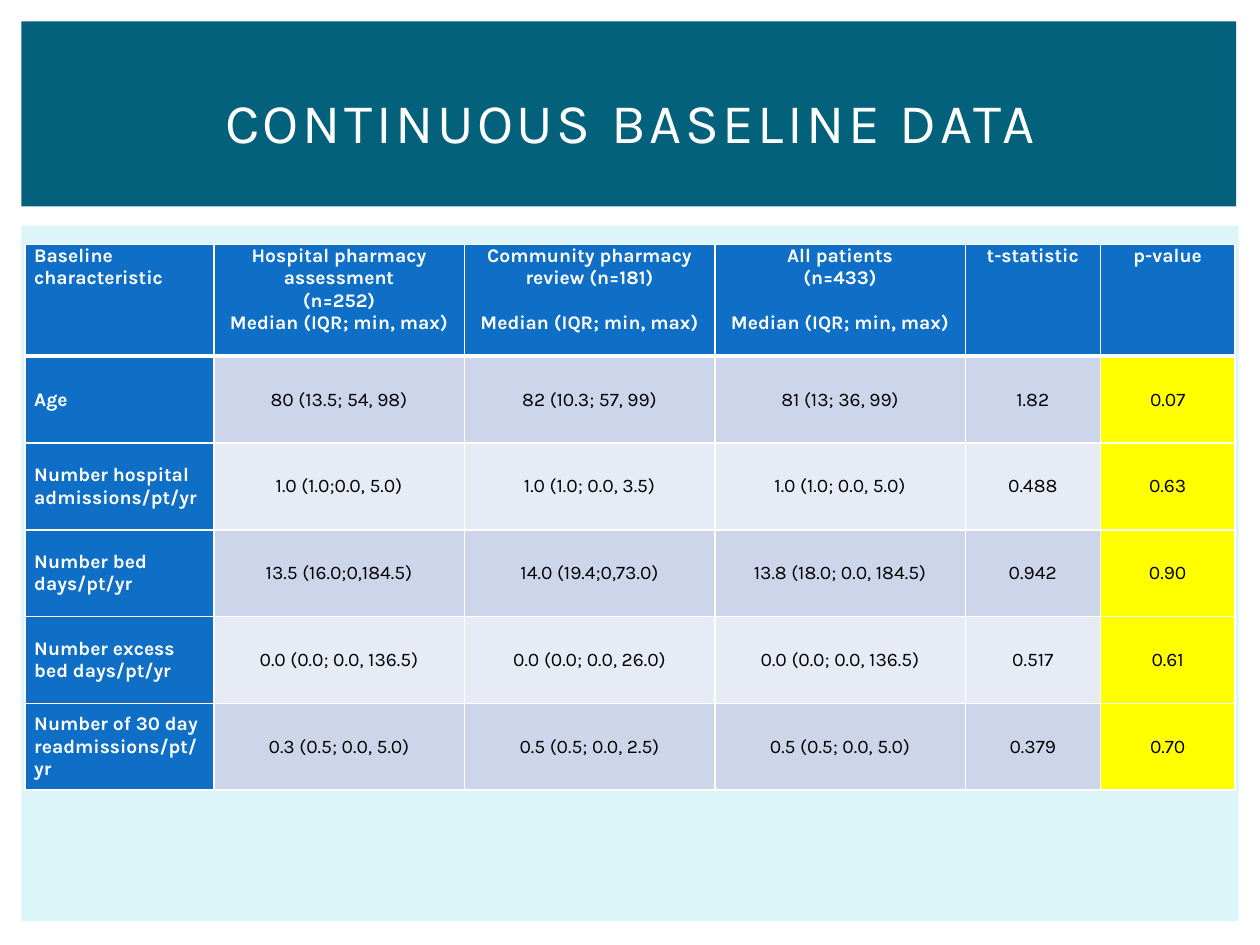
import pptx
import pptx.dml.color
import pptx.enum.shapes
import pptx.enum.text
import pptx.oxml
import pptx.oxml.ns
import pptx.util

Cm = pptx.util.Cm
Pt = pptx.util.Pt
RGBColor = pptx.dml.color.RGBColor
ALIGN = pptx.enum.text.PP_ALIGN
ANCHOR = pptx.enum.text.MSO_ANCHOR

WHITE = RGBColor(0xFF, 0xFF, 0xFF)
BLACK = RGBColor(0x00, 0x00, 0x00)
TEAL = RGBColor(0x04, 0x61, 0x7B)
PALE_AQUA = RGBColor(0xDB, 0xF5, 0xF9)
BLUE = RGBColor(0x0F, 0x6F, 0xC6)
BAND_DARK = RGBColor(0xCC, 0xD5, 0xEA)
BAND_LIGHT = RGBColor(0xE7, 0xEB, 0xF5)
YELLOW = RGBColor(0xFF, 0xFF, 0x00)

HEADINGS = [
    "Baseline characteristic",
    "Hospital pharmacy assessment\n(n=252)\nMedian (IQR; min, max)",
    "Community pharmacy review (n=181)\n\nMedian (IQR; min, max)",
    "All patients\n(n=433)\n\nMedian (IQR; min, max)",
    "t-statistic",
    "p-value",
]
CHARACTERISTICS = [
    ["Age", "80 (13.5; 54, 98)", "82 (10.3; 57, 99)",
     "81 (13; 36, 99)", "1.82", "0.07"],
    ["Number hospital admissions/pt/yr", "1.0 (1.0;0.0, 5.0)", "1.0 (1.0; 0.0, 3.5)",
     "1.0 (1.0; 0.0, 5.0)", "0.488", "0.63"],
    ["Number bed days/pt/yr", "13.5 (16.0;0,184.5)", "14.0 (19.4;0,73.0)",
     "13.8 (18.0; 0.0, 184.5)", "0.942", "0.90"],
    ["Number excess bed days/pt/yr", "0.0 (0.0; 0.0, 136.5)", "0.0 (0.0; 0.0, 26.0)",
     "0.0 (0.0; 0.0, 136.5)", "0.517", "0.61"],
    ["Number of 30 day readmissions/pt/yr", "0.3 (0.5; 0.0, 5.0)", "0.5 (0.5; 0.0, 2.5)",
     "0.5 (0.5; 0.0, 5.0)", "0.379", "0.70"],
]
COLUMN_WIDTHS = [3.81, 5.05, 5.05, 5.05, 2.72, 2.72]
HEADING_HEIGHT = 2.25
ROW_HEIGHT = 1.75


def write_text(frame, text, font, size, color, bold=False, align=ALIGN.CENTER, tracking=0):
    for number, block in enumerate(text.split("\n\n")):
        for position, line in enumerate(block.split("\n")):
            first = number == position == 0
            paragraph = frame.paragraphs[0] if first else frame.add_paragraph()
            paragraph.alignment = align
            paragraph.line_spacing = 1.0
            paragraph.space_before = Pt(size * 1.17 if number and not position else 0)
            paragraph.space_after = Pt(0)
            run = paragraph.add_run()
            run.text = line
            run.font.name = font
            run.font.size = Pt(size)
            run.font.bold = bold
            run.font.color.rgb = color
            if tracking:
                run.font._element.set("spc", str(tracking * 100))


class BaselineSlide:
    font = "Karla"
    title_size = 32
    table_size = 11

    def __init__(self, deck):
        self.slide = deck.slides.add_slide(deck.slide_layouts[5])

    def panel(self, left, top, width, height, color):
        panel = self.slide.shapes.add_shape(
            pptx.enum.shapes.MSO_SHAPE.RECTANGLE, Cm(left), Cm(top), Cm(width), Cm(height))
        panel.shadow.inherit = False
        panel.fill.solid()
        panel.fill.fore_color.rgb = color
        panel.line.fill.background()

    def title(self, text, left, top, width, height):
        title = self.slide.shapes.title
        title.left, title.top = Cm(left), Cm(top)
        title.width, title.height = Cm(width), Cm(height)
        title.text_frame.word_wrap = True
        title.text_frame.vertical_anchor = ANCHOR.MIDDLE
        write_text(title.text_frame, text, font=self.font, size=self.title_size,
                   color=WHITE, tracking=2)
        title.element.getparent().append(title.element)

    def borders(self, cell, **widths):
        properties = cell._tc.get_or_add_tcPr()
        for side in "LRTB":
            properties.append(pptx.oxml.parse_xml(
                f'<a:ln{side} {pptx.oxml.ns.nsdecls("a")} w="{Pt(widths.get(side, 1))}">'
                f'<a:solidFill><a:srgbClr val="{WHITE}"/></a:solidFill></a:ln{side}>'))

    def cell(self, cell, text, row, column):
        heading = row == 0
        label = heading or column == 0
        cell.margin_left = cell.margin_right = Cm(0.19)
        cell.margin_top = cell.margin_bottom = 0
        cell.vertical_anchor = ANCHOR.TOP if heading else ANCHOR.MIDDLE
        self.borders(cell, B=3 if heading else 1, T=3 if row == 1 else 1)
        if label:
            fill = BLUE
        elif column == len(HEADINGS) - 1:
            fill = YELLOW
        else:
            fill = BAND_DARK if row % 2 else BAND_LIGHT
        cell.fill.solid()
        cell.fill.fore_color.rgb = fill
        write_text(cell.text_frame, text, font=self.font, size=self.table_size,
                   color=WHITE if label else BLACK, bold=label,
                   align=ALIGN.CENTER if column else ALIGN.LEFT)

    def table(self, rows, left, top):
        heights = [HEADING_HEIGHT] + [ROW_HEIGHT] * (len(rows) - 1)
        table = self.slide.shapes.add_table(
            len(rows), len(COLUMN_WIDTHS), Cm(left), Cm(top),
            Cm(sum(COLUMN_WIDTHS)), Cm(sum(heights))).table
        for column, width in zip(table.columns, COLUMN_WIDTHS):
            column.width = Cm(width)
        for row, height in zip(table.rows, heights):
            row.height = Cm(height)
        for row, texts in enumerate(rows):
            for column, text in enumerate(texts):
                self.cell(table.cell(row, column), text, row, column)


def main():
    deck = pptx.Presentation()
    deck.slide_width, deck.slide_height = Cm(25.4), Cm(19.05)
    baseline = BaselineSlide(deck)
    baseline.panel(0.43, 4.55, 24.54, 14.02, PALE_AQUA)
    baseline.panel(0.43, 0.43, 24.49, 3.73, TEAL)
    baseline.table([HEADINGS] + CHARACTERISTICS, 0.5, 4.93)
    baseline.title("CONTINUOUS BASELINE DATA", 1.07, 0.99, 23.29, 2.92)
    deck.save("out.pptx")


if __name__ == "__main__":
    main()
